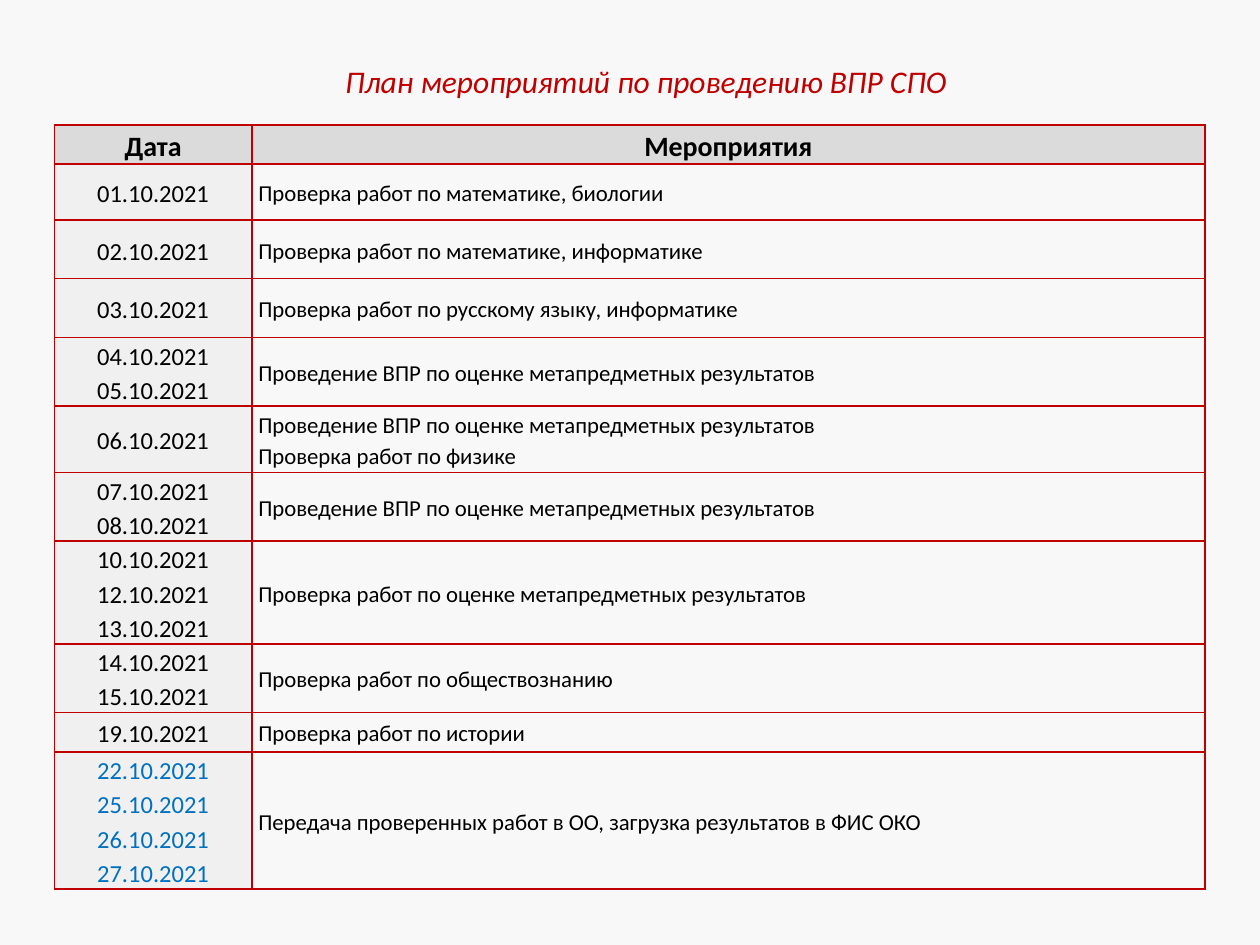
from lxml.etree import SubElement
from pptx import Presentation
from pptx.dml.color import RGBColor
from pptx.enum.text import MSO_ANCHOR, MSO_AUTO_SIZE, PP_ALIGN
from pptx.oxml.ns import qn
from pptx.util import Pt

COLORS = {
    "page": "F8F8F8",
    "red": "C00000",
    "head": "DBDBDB",
    "date": "F0F0F0",
    "black": "000000",
    "blue": "0070C0",
}

META = "Проведение ВПР по оценке метапредметных результатов"

# Row height, dates, events
PLAN = [
    (32, ["01.10.2021"], ["Проверка работ по математике, биологии"]),
    (33.5, ["02.10.2021"], ["Проверка работ по математике, информатике"]),
    (33.5, ["03.10.2021"], ["Проверка работ по русскому языку, информатике"]),
    (36, ["04.10.2021", "05.10.2021"], [META]),
    (38, ["06.10.2021"], [META, "Проверка работ по физике"]),
    (36, ["07.10.2021", "08.10.2021"], [META]),
    (54, ["10.10.2021", "12.10.2021", "13.10.2021"],
     ["Проверка работ по оценке метапредметных результатов"]),
    (36, ["14.10.2021", "15.10.2021"], ["Проверка работ по обществознанию"]),
    (22.5, ["19.10.2021"], ["Проверка работ по истории"]),
    (72, ["22.10.2021", "25.10.2021", "26.10.2021", "27.10.2021"],
     ["Передача проверенных работ в ОО, загрузка результатов в ФИС ОКО"]),
]


def rgb(name):
    return RGBColor.from_string(COLORS[name])


class Deck:
    font = "Calibri"

    def __init__(self, wide, high):
        self.prs = Presentation()
        self.prs.slide_width, self.prs.slide_height = Pt(wide), Pt(high)
        self.slide = self.prs.slides.add_slide(self.prs.slide_layouts[5])
        fill = self.slide.background.fill
        fill.solid()
        fill.fore_color.rgb = rgb("page")

    def style(self, para, size, color, align, bold=False, italic=False):
        para.alignment = align
        for run in para.runs:
            font = run.font
            font.name, font.size = self.font, Pt(size)
            font.bold, font.italic = bold, italic
            font.color.rgb = rgb(color)

    def title(self, text, left, top, width, height):
        box = self.slide.shapes.title
        box.left, box.top = Pt(left), Pt(top)
        box.width, box.height = Pt(width), Pt(height)
        frame = box.text_frame
        frame.text = text
        frame.word_wrap = False
        frame.auto_size = MSO_AUTO_SIZE.NONE
        self.style(frame.paragraphs[0], 18, "red", PP_ALIGN.LEFT, italic=True)

    def table(self, left, top, cols, rows):
        frame = self.slide.shapes.add_table(
            len(rows), len(cols), Pt(left), Pt(top), Pt(sum(cols)), Pt(sum(rows)))
        grid = frame.table
        grid.first_row = grid.horz_banding = False
        for col, width in zip(grid.columns, cols):
            col.width = Pt(width)
        for row, height in zip(grid.rows, rows):
            row.height = Pt(height)
        return grid

    def border(self, cell):
        props = cell._tc.get_or_add_tcPr()
        for side in ("lnL", "lnR", "lnT", "lnB"):
            line = SubElement(props, qn(f"a:{side}"), w=str(Pt(1)))
            fill = SubElement(line, qn("a:solidFill"))
            SubElement(fill, qn("a:srgbClr"), val=COLORS["red"])

    def cell(self, cell, lines, size, align, back=None, color="black", bold=False):
        self.border(cell)
        if back:
            cell.fill.solid()
            cell.fill.fore_color.rgb = rgb(back)
        else:
            cell.fill.background()
        cell.vertical_anchor = MSO_ANCHOR.MIDDLE
        cell.margin_left = cell.margin_right = Pt(3.6)
        cell.margin_top = cell.margin_bottom = Pt(0)
        cell.text_frame.text = "\n".join(lines)
        for para in cell.text_frame.paragraphs:
            para.line_spacing = 1.15
            self.style(para, size, color, align, bold)


def main():
    deck = Deck(720, 540)
    grid = deck.table(31, 71.3, [113, 544.5], [22.5] + [row[0] for row in PLAN])
    for col, name in enumerate(["Дата", "Мероприятия"]):
        deck.cell(grid.cell(0, col), [name], 16, PP_ALIGN.CENTER, "head", bold=True)
    for row, (_, dates, events) in enumerate(PLAN, 1):
        color = "blue" if row == len(PLAN) else "black"
        deck.cell(grid.cell(row, 0), dates, 14, PP_ALIGN.CENTER, "date", color)
        deck.cell(grid.cell(row, 1), events, 13, PP_ALIGN.LEFT)
    deck.title("План мероприятий по проведению ВПР СПО", 190, 32, 362, 29)
    deck.prs.save("out.pptx")


if __name__ == "__main__":
    main()
